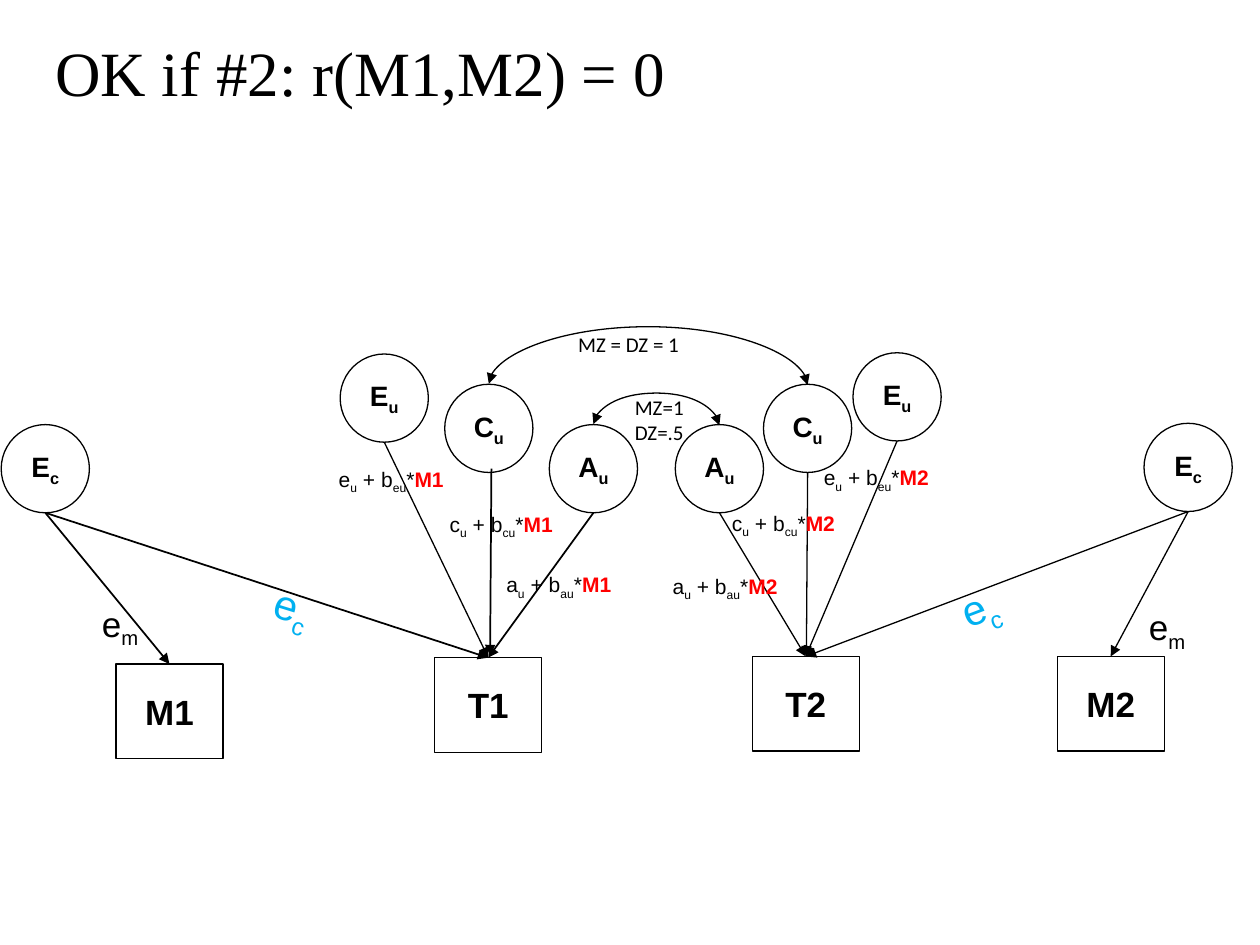
from dataclasses import dataclass

from lxml import etree
from pptx import Presentation
from pptx import util as u
from pptx.dml.color import RGBColor
from pptx.enum import shapes, text
from pptx.oxml.ns import qn


@dataclass(frozen=True)
class Theme:
    ink: str = "000000"
    paper: str = "FFFFFF"
    moderator: str = "FF0000"
    common: str = "00B0F0"
    sans: str = "Arial"
    serif: str = "Times New Roman"
    note: str = "Calibri"
    title_size: int = 36
    common_size: int = 24
    trait_size: int = 20
    factor_size: int = 16
    label_size: int = 12
    thin: float = 0.75
    thick: float = 1


THEME = Theme()


def add_run(paragraph, content, *, size, font=THEME.sans, color=THEME.ink, bold=False, sub=False):
    run = paragraph.add_run()
    run.text = content
    run.font.size = u.Pt(size)
    run.font.name = font
    run.font.bold = bold
    run.font.color.rgb = RGBColor.from_string(color)
    if sub:
        run._r.get_or_add_rPr().set("baseline", "-25000")


class PathDiagram:
    circle = 0.7
    box_width, box_height = 0.85, 0.75

    def __init__(self, slide, theme):
        self.slide = slide
        self.theme = theme

    def node(self, preset, left, top, width, height, letter, index, size):
        node = self.slide.shapes.add_shape(preset, *map(u.Inches, (left, top, width, height)))
        node.shadow.inherit = False
        node.fill.solid()
        node.fill.fore_color.rgb = RGBColor.from_string(self.theme.paper)
        node.line.color.rgb = RGBColor.from_string(self.theme.ink)
        node.line.width = u.Pt(self.theme.thin)
        frame = node.text_frame
        frame.word_wrap = False
        frame.vertical_anchor = text.MSO_ANCHOR.MIDDLE
        paragraph = frame.paragraphs[0]
        paragraph.alignment = text.PP_ALIGN.CENTER
        add_run(paragraph, letter, size=size, bold=True)
        if index:
            add_run(paragraph, index, size=size, bold=True, sub=True)
        return node

    def factor(self, name, left, top):
        self.node(shapes.MSO_SHAPE.OVAL, left, top, self.circle, self.circle,
                  name[0], name[1:], self.theme.factor_size)
        return left + self.circle / 2, top + self.circle

    def trait(self, name, left, top):
        return self.node(shapes.MSO_SHAPE.RECTANGLE, left, top, self.box_width,
                         self.box_height, name, "", self.theme.trait_size)

    def connector(self, kind, start, end, weight, ends):
        line = self.slide.shapes.add_connector(kind, *map(u.Inches, (*start, *end)))
        line.line.color.rgb = RGBColor.from_string(self.theme.ink)
        line.line.width = u.Pt(weight)
        outline = line.line._get_or_add_ln()
        for end_name in ends:
            etree.SubElement(outline, qn(f"a:{end_name}"), type="triangle")
        etree.SubElement(line._element.spPr, qn("a:effectLst"))
        return line

    def loading(self, start, trait=None, end=(0, 0), weight=THEME.thin):
        arrow = self.connector(shapes.MSO_CONNECTOR.STRAIGHT, start, end, weight, ["tailEnd"])
        if trait is not None:
            arrow.end_connect(trait, 0)

    def correlation(self, left, right, base, rise):
        depth = 0.01
        middle, half = (left + right) / 2, (right - left) / 2
        arc = self.connector(shapes.MSO_CONNECTOR.CURVE, (middle - depth / 2, base + half),
                             (middle + depth / 2, base - half), self.theme.thin,
                             ["headEnd", "tailEnd"])
        properties = arc._element.spPr
        properties.find(qn("a:xfrm")).set("rot", "5400000")
        guides = properties.find(qn("a:prstGeom")).get_or_add_avLst()
        etree.SubElement(guides, qn("a:gd"), name="adj1",
                         fmla=f"val {round(-rise / depth * 100000)}")

    def label(self, left, top, width, height, *lines, angle=0, **style):
        label = self.slide.shapes.add_textbox(*map(u.Inches, (left, top, width, height)))
        label.rotation = angle
        frame = label.text_frame
        frame.word_wrap = False
        frame.auto_size = text.MSO_AUTO_SIZE.SHAPE_TO_FIT_TEXT
        for number, line in enumerate(lines):
            paragraph = frame.add_paragraph() if number else frame.paragraphs[0]
            for content, special in line:
                add_run(paragraph, content, **{**style, **special})

    def moderated(self, letter, moderator, left, top):
        sub = {"sub": True}
        self.label(left, top, 1.05 if letter == "c" else 1.07, 0.3,
                   [(letter, {}), ("u", sub), (" + b", {}), (letter + "u", sub), ("*", {}),
                    (moderator, {"color": self.theme.moderator, "bold": True})],
                   size=self.theme.label_size)

    def coefficient(self, index, left, top, width, height, **style):
        self.label(left, top, width, height, [("e", {}), (index, {"sub": True})], **style)


def main():
    deck = Presentation()
    deck.slide_width, deck.slide_height = u.Inches(10), u.Inches(7.5)
    diagram = PathDiagram(deck.slides.add_slide(deck.slide_layouts[6]), THEME)
    thin, thick = THEME.thin, THEME.thick

    twins = [
        dict(trait=("T1", 3.45, 5.22), moderator=("M1", 0.92, 5.27), shared=("Ec", 0.01, 3.37),
             unique=[("Eu", 2.7, 2.81, thin), ("Au", 4.36, 3.37, thick)],
             c_factor=("Cu", 3.53, 3.05), c_path=((3.9, 3.72), (3.89, 5.2)), weight=thick,
             labels=[("a", 3.92, 4.49), ("c", 3.47, 4.01), ("e", 2.59, 3.65)],
             common=(2.08, 4.57, 0.55, 0.51), angle=17.1, specific=(0.71, 4.73)),
        dict(trait=("T2", 5.97, 5.21), moderator=("M2", 8.39, 5.21), shared=("Ec", 9.08, 3.36),
             unique=[("Au", 5.36, 3.37, thin), ("Eu", 6.77, 2.8, thin)],
             c_factor=("Cu", 6.06, 3.05), c_path=((6.41, 3.75), (6.4, 5.21)), weight=thin,
             labels=[("e", 6.44, 3.64), ("c", 5.71, 4), ("a", 5.24, 4.5)],
             common=(7.53, 4.56, 0.5, 0.51), angle=339.2, specific=(9.02, 4.76)),
    ]
    for twin in twins:
        trait = diagram.trait(*twin["trait"])
        moderator = diagram.trait(*twin["moderator"])
        shared = diagram.factor(*twin["shared"])
        diagram.factor(*twin["c_factor"])
        for name, left, top, weight in twin["unique"]:
            diagram.loading(diagram.factor(name, left, top), trait, weight=weight)
        start, end = twin["c_path"]
        diagram.loading(start, end=end, weight=twin["weight"])
        for target in (trait, moderator):
            diagram.loading(shared, target, weight=twin["weight"])
        for letter, left, top in twin["labels"]:
            diagram.moderated(letter, twin["moderator"][0], left, top)
        diagram.coefficient("c", *twin["common"], angle=twin["angle"],
                            size=THEME.common_size, color=THEME.common)
        diagram.coefficient("m", *twin["specific"], 0.51, 0.44, size=THEME.trait_size)

    diagram.correlation(4.71, 5.71, 3.37, 0.25)
    diagram.correlation(3.88, 6.41, 3.05, 0.46)
    note = dict(size=THEME.label_size, font=THEME.note)
    diagram.label(4.94, 3.08, 0.63, 0.5, [("MZ=1", {})], [("DZ=.5", {})], **note)
    diagram.label(4.49, 2.58, 1.01, 0.3, [("MZ = DZ = 1", {})], **note)
    diagram.label(0.34, 0.22, 5.09, 0.71, [("OK if #2: r(M1,M2) = 0", {})],
                  size=THEME.title_size, font=THEME.serif)
    deck.save("out.pptx")


if __name__ == "__main__":
    main()
